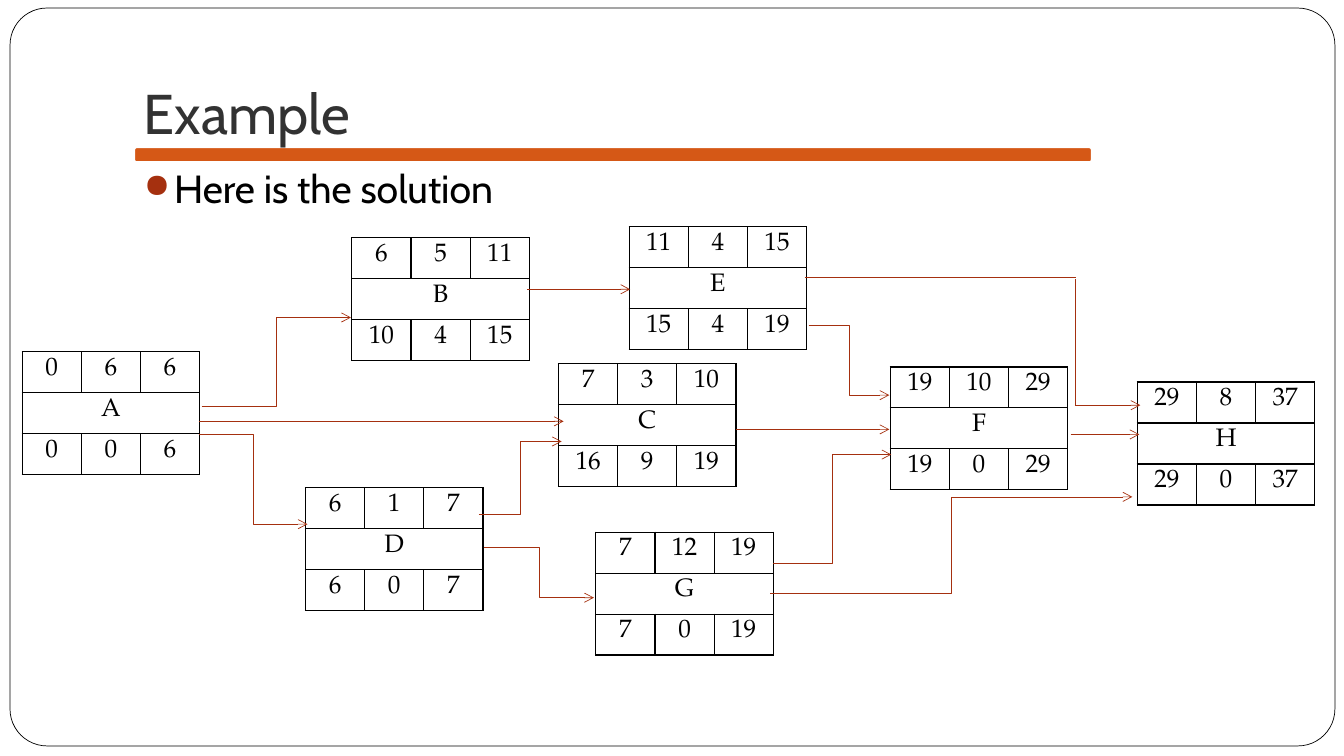
from lxml.etree import SubElement
from pptx import Presentation
from pptx.dml.color import RGBColor
from pptx.enum.shapes import MSO_CONNECTOR, MSO_SHAPE
from pptx.enum.text import MSO_ANCHOR, PP_ALIGN
from pptx.oxml.ns import qn
from pptx.util import Inches, Pt

COLORS = {
    "paper": "FFFFFF",
    "ink": "000000",
    "title": "323232",
    "bar": "D55816",
    "arrow": "A5300F",
}
HEADING_FONT = "Cabin"
TABLE_FONT = "TeX Gyre Pagella"
NODE_WIDTH, NODE_HEIGHT = 1.76, 1.22

# Name: left, top, (early start, duration, early finish), (late start, slack, late finish)
ACTIVITIES = {
    "A": (0.22, 3.49, (0, 6, 6), (0, 0, 6)),
    "B": (3.49, 2.36, (6, 5, 11), (10, 4, 15)),
    "E": (6.24, 2.25, (11, 4, 15), (15, 4, 19)),
    "C": (5.54, 3.61, (7, 3, 10), (16, 9, 19)),
    "D": (3.03, 4.84, (6, 1, 7), (6, 0, 7)),
    "G": (5.91, 5.28, (7, 12, 19), (7, 0, 19)),
    "F": (8.83, 3.64, (19, 10, 29), (19, 0, 29)),
    "H": (11.28, 3.79, (29, 8, 37), (29, 0, 37)),
}

# Start and end points
BENT_ARROWS = [
    ((2, 4.03), (3.48, 3.15)),       # A to B
    ((1.97, 4.31), (3.05, 5.2)),     # A to D
    ((4.75, 5.1), (5.57, 4.38)),     # D to C
    ((4.8, 5.43), (5.89, 5.93)),     # D to G
    ((8.02, 3.23), (8.82, 3.92)),    # E to F
    ((7.67, 5.59), (8.84, 4.51)),    # G to F
    ((7.64, 5.89), (11.23, 4.93)),   # G to H
]
STRAIGHT_ARROWS = [
    ((1.97, 4.18), (5.59, 4.18)),    # A to C
    ((5.23, 2.87), (6.25, 2.87)),    # B to E
    ((7.3, 4.26), (8.82, 4.26)),     # C to F
    ((10.62, 4.31), (11.3, 4.31)),   # F to H
    ((10.66, 4.02), (11.31, 4.02)),  # E to H, last leg
]
PLAIN_LINES = [
    ((7.98, 2.75), (10.67, 2.75)),   # E to H, first leg
    ((10.67, 2.77), (10.67, 4.02)),  # E to H, second leg
]


def color(name):
    return RGBColor.from_string(COLORS[name])


def write_text(frame, text, font, size, ink="ink", align=PP_ALIGN.LEFT, before=0):
    paragraph = frame.paragraphs[0]
    paragraph.alignment = align
    paragraph.space_before = Pt(before)
    run = paragraph.add_run()
    run.text = text
    run.font.name = font
    run.font.size = Pt(size)
    run.font.color.rgb = color(ink)
    return paragraph


class NetworkSlide:
    def __init__(self, slide):
        self.slide = slide

    def rounded_box(self, left, top, width, height, fill, line, weight, rounding):
        shape = self.slide.shapes.add_shape(
            MSO_SHAPE.ROUNDED_RECTANGLE,
            Inches(left), Inches(top), Inches(width), Inches(height))
        shape.adjustments[0] = rounding
        shape.shadow.inherit = False
        shape.fill.solid()
        shape.fill.fore_color.rgb = color(fill)
        shape.line.color.rgb = color(line)
        shape.line.width = Pt(weight)

    def text_box(self, text, left, top, width, height,
                 anchor=MSO_ANCHOR.TOP, bottom=0.05, **style):
        box = self.slide.shapes.add_textbox(
            Inches(left), Inches(top), Inches(width), Inches(height))
        frame = box.text_frame
        frame.word_wrap = True
        frame.vertical_anchor = anchor
        frame.margin_bottom = Inches(bottom)
        return write_text(frame, text, HEADING_FONT, **style)

    def bullet(self, paragraph, indent):
        properties = paragraph._p.get_or_add_pPr()
        properties.set("marL", str(Inches(indent)))
        properties.set("indent", str(-Inches(indent)))
        bullet_color = SubElement(properties, qn("a:buClr"))
        SubElement(bullet_color, qn("a:srgbClr"), val=COLORS["arrow"])
        SubElement(properties, qn("a:buSzPct"), val="85000")
        SubElement(properties, qn("a:buChar"), char="●")

    def cell_border(self, cell):
        properties = cell._tc.get_or_add_tcPr()
        for side in ("lnL", "lnR", "lnT", "lnB"):
            line = SubElement(properties, qn(f"a:{side}"), w=str(Pt(1)))
            fill = SubElement(line, qn("a:solidFill"))
            SubElement(fill, qn("a:srgbClr"), val=COLORS["ink"])

    def activity(self, name, left, top, early, late):
        table = self.slide.shapes.add_table(
            3, 3, Inches(left), Inches(top),
            Inches(NODE_WIDTH), Inches(NODE_HEIGHT)).table
        table.first_row = table.horz_banding = False
        for cell in table.iter_cells():
            self.cell_border(cell)
            cell.fill.background()
        table.cell(1, 0).merge(table.cell(1, 2))
        for row, values in enumerate((early, (name,), late)):
            for column, value in enumerate(values):
                write_text(table.cell(row, column).text_frame, str(value),
                           TABLE_FONT, 18, align=PP_ALIGN.CENTER)

    def connector(self, start, end, kind=MSO_CONNECTOR.STRAIGHT, arrow=True):
        points = [Inches(value) for value in (*start, *end)]
        connector = self.slide.shapes.add_connector(kind, *points)
        connector.line.color.rgb = color("arrow")
        connector.line.width = Pt(0.5)
        if arrow:
            SubElement(connector.line._get_or_add_ln(), qn("a:tailEnd"), type="arrow")
        SubElement(connector._element.spPr, qn("a:effectLst"))


def main():
    presentation = Presentation()
    presentation.slide_width = Inches(13.33)
    presentation.slide_height = Inches(7.5)
    network = NetworkSlide(presentation.slides.add_slide(presentation.slide_layouts[6]))

    # Frame and title bar
    network.rounded_box(0.1, 0.08, 13.14, 7.32, "paper", "ink", 0.5, 0.05)
    network.rounded_box(1.33, 1.46, 9.5, 0.15, "bar", "paper", 1.5, 0.17)

    # Heading and bullet line
    solution = network.text_box("Here is the solution", 1.33, 1.58, 11.33, 5,
                                size=28, before=5.8)
    network.bullet(solution, 0.3)
    network.text_box("Example", 1.33, 0.3, 11.33, 1.25, anchor=MSO_ANCHOR.BOTTOM,
                     bottom=0.1, size=40, ink="title")

    # Activity tables
    for name, details in ACTIVITIES.items():
        network.activity(name, *details)

    # Dependencies
    for start, end in BENT_ARROWS:
        network.connector(start, end, kind=MSO_CONNECTOR.ELBOW)
    for start, end in STRAIGHT_ARROWS:
        network.connector(start, end)
    for start, end in PLAIN_LINES:
        network.connector(start, end, arrow=False)

    presentation.save("out.pptx")


if __name__ == "__main__":
    main()
